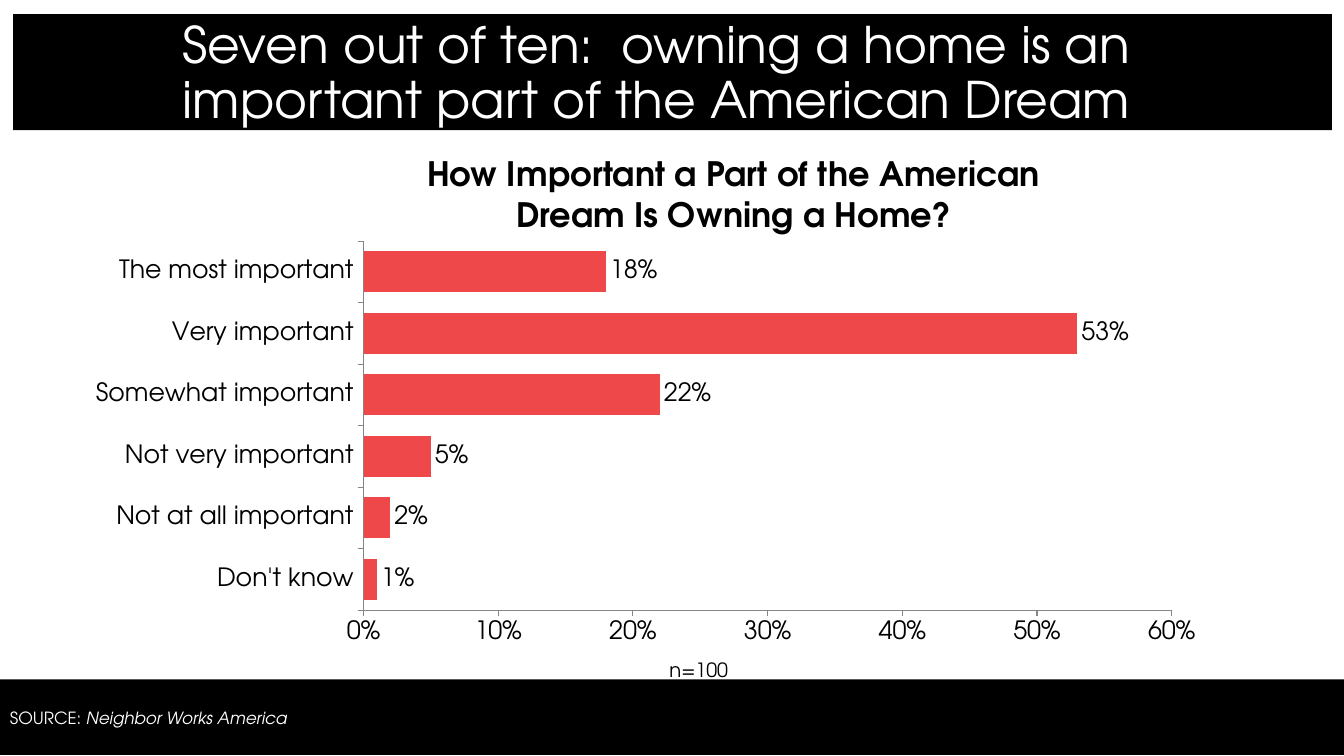
from lxml import etree
from pptx import Presentation
from pptx.chart.data import CategoryChartData
from pptx.dml.color import RGBColor
from pptx.enum.chart import XL_CHART_TYPE, XL_LABEL_POSITION, XL_TICK_MARK
from pptx.enum.shapes import MSO_SHAPE
from pptx.enum.text import PP_ALIGN
from pptx.oxml.ns import qn
from pptx.util import Inches, Pt

RECT = MSO_SHAPE.RECTANGLE
LEFT, CENTER = PP_ALIGN.LEFT, PP_ALIGN.CENTER
BAR = XL_CHART_TYPE.BAR_CLUSTERED
OUTSIDE_END = XL_LABEL_POSITION.OUTSIDE_END
TICK_OUT, TICK_NONE = XL_TICK_MARK.OUTSIDE, XL_TICK_MARK.NONE
FONT = "TeX Gyre Adventor"
BLACK, WHITE, RED, GRAY = "000000", "FFFFFF", "EE484A", "868686"


def rgb(hex_color):
    return RGBColor.from_string(hex_color)


def add_text(s, box, runs, size, color, align=LEFT, wrap=True, spacing=None, bold=False):
    tb = s.shapes.add_textbox(*[Inches(v) for v in box])
    tf = tb.text_frame
    tf.word_wrap = wrap
    p = tf.paragraphs[0]
    p.alignment = align
    if spacing:
        p.line_spacing = spacing
    for text, italic in runs:
        r = p.add_run()
        r.text = text
        r.font.name = FONT
        r.font.size = Pt(size)
        r.font.bold = bold
        r.font.italic = italic
        r.font.color.rgb = rgb(color)


prs = Presentation()
prs.slide_width = Inches(13.33)
prs.slide_height = Inches(7.5)
s = prs.slides.add_slide(prs.slide_layouts[6])

for box in [(0, 6.74, 13.33, 0.75), (0.13, 0.14, 13.08, 1.15)]:
    sp = s.shapes.add_shape(RECT, *[Inches(v) for v in box])
    sp.shadow.inherit = False
    sp.fill.solid()
    sp.fill.fore_color.rgb = rgb(BLACK)
    sp.line.fill.background()

add_text(s, (1.71, 0.15, 11.37, 0.67),
         [("Seven out of ten:  owning a home is an important part of the American Dream", False)],
         36, WHITE, spacing=0.9)
add_text(s, (3.9, 1.47, 6.75, 0.91),
         [("How Important a Part of the American Dream Is Owning a Home?", False)],
         24, BLACK, align=CENTER, bold=True)
add_text(s, (0, 6.97, 2.99, 0.3),
         [("SOURCE: ", False), ("Neighbor Works America", True)], 12, WHITE, wrap=False)

answers = {
    "Don't know": 0.01,
    "Not at all important": 0.02,
    "Not very important": 0.05,
    "Somewhat important": 0.22,
    "Very important": 0.53,
    "The most important": 0.18,
}
data = CategoryChartData(number_format="0%")
data.categories = list(answers)
data.add_series("Series 1", list(answers.values()))
chart = s.shapes.add_chart(BAR, Inches(0.73), Inches(2.31), Inches(11.37), Inches(4.17), data).chart
chart.has_title = False
chart.has_legend = False
chart.font.name = FONT
chart.font.size = Pt(18)
chart.font.color.rgb = rgb(BLACK)

plot = chart.plots[0]
plot.gap_width = 50
plot.vary_by_categories = False
fill = plot.series[0].format.fill
fill.solid()
fill.fore_color.rgb = rgb(RED)
plot.has_data_labels = True
labels = plot.data_labels
labels.show_value = True
labels.number_format = "0%"
labels.number_format_is_linked = False
labels.position = OUTSIDE_END

for axis in (chart.category_axis, chart.value_axis):
    axis.has_major_gridlines = False
    axis.major_tick_mark = TICK_OUT
    axis.minor_tick_mark = TICK_NONE
    axis.format.line.color.rgb = rgb(GRAY)
    axis.format.line.width = Pt(0.75)
chart.value_axis.minimum_scale = 0
chart.value_axis.maximum_scale = 0.6
chart.value_axis.major_unit = 0.1
chart.value_axis.tick_labels.number_format = "0%"
chart.value_axis.tick_labels.number_format_is_linked = False

area = chart.element.find(".//" + qn("c:plotArea"))
layout = area.find(qn("c:layout"))
if layout is None:
    layout = etree.Element(qn("c:layout"))
    area.insert(0, layout)
manual = etree.SubElement(layout, qn("c:manualLayout"))
for tag, val in [("layoutTarget", "inner"), ("xMode", "edge"), ("yMode", "edge"),
                 ("x", "0.253"), ("y", "0.02"), ("w", "0.705"), ("h", "0.878")]:
    etree.SubElement(manual, qn("c:" + tag)).set("val", val)

add_text(s, (6.54, 6.48, 0.88, 0.34), [("n=1000", False)], 14, BLACK, wrap=False)

prs.save("out.pptx")
